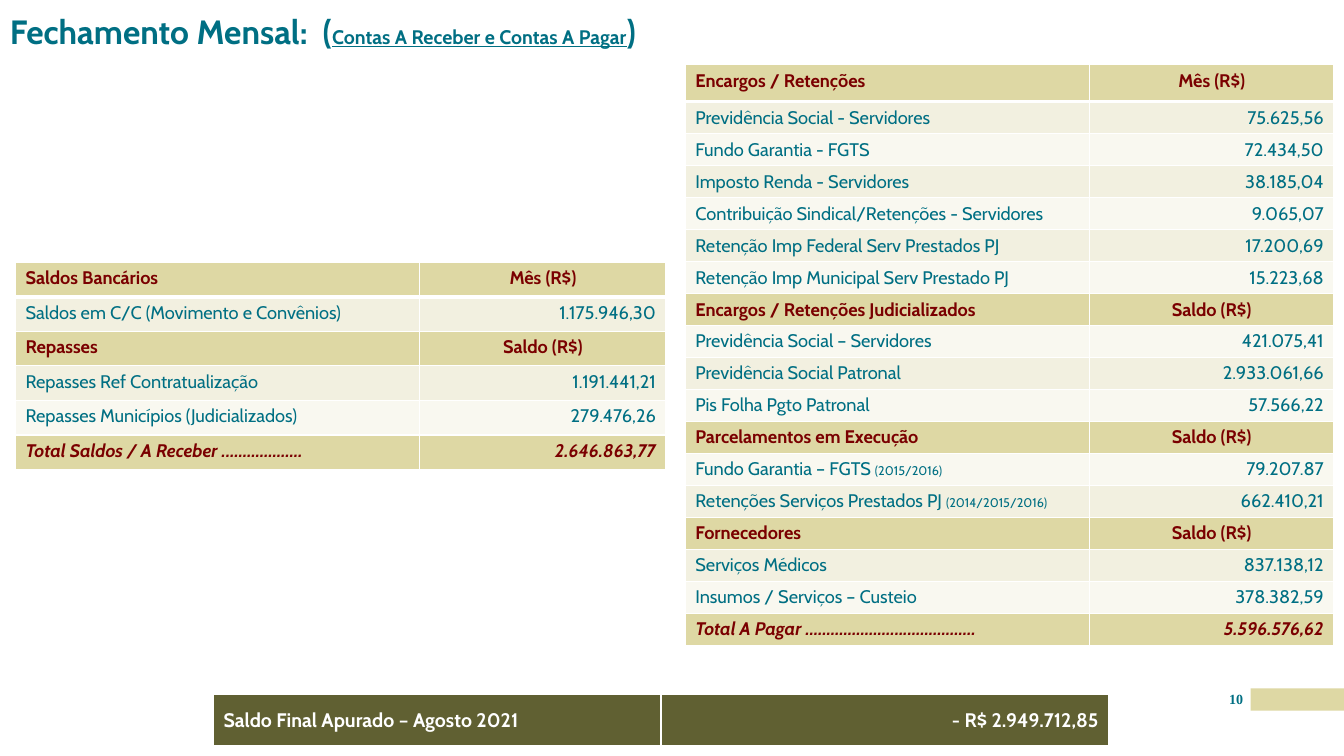
import pptx
import pptx.util
import pptx.dml.color
import pptx.enum.text
import pptx.enum.shapes
import pptx.oxml
import pptx.oxml.ns

Cm = pptx.util.Cm
Pt = pptx.util.Pt
TEAL, WINE, WHITE = "006F83", "7A0000", "FFFFFF"
SAND, OLIVE = "DED8A4", "606032"
BANDS = ["F9F8F0", "F2F0E0"]
ALIGN = {
    "l": pptx.enum.text.PP_ALIGN.LEFT,
    "c": pptx.enum.text.PP_ALIGN.CENTER,
    "r": pptx.enum.text.PP_ALIGN.RIGHT,
}

TITLE = [
    ("Fechamento Mensal:  (", {}),
    ("Contas A Receber e Contas A Pagar", {"size": 14, "line": True}),
    (")", {}),
]
DEBTS = [
    ("Encargos / Retenções", "Mês (R$)"),
    ("Previdência Social - Servidores", "75.625,56"),
    ("Fundo Garantia - FGTS", "72.434,50"),
    ("Imposto Renda - Servidores", "38.185,04"),
    ("Contribuição Sindical/Retenções - Servidores", "9.065,07"),
    ("Retenção Imp Federal Serv Prestados PJ", "17.200,69"),
    ("Retenção Imp Municipal Serv Prestado PJ", "15.223,68"),
    ("Encargos / Retenções Judicializados", "Saldo (R$)"),
    ("Previdência Social – Servidores", "421.075,41"),
    ("Previdência Social Patronal", "2.933.061,66"),
    ("Pis Folha Pgto Patronal", "57.566,22"),
    ("Parcelamentos em Execução", "Saldo (R$)"),
    ("Fundo Garantia – FGTS ", "79.207.87", "(2015/2016)"),
    ("Retenções Serviços Prestados PJ ", "662.410,21", "(2014/2015/2016)"),
    ("Fornecedores", "Saldo (R$)"),
    ("Serviços Médicos", "837.138,12"),
    ("Insumos / Serviços – Custeio", "378.382,59"),
    ("Total A Pagar ........................................", "5.596.576,62"),
]
FUNDS = [
    ("Saldos Bancários", "Mês (R$)"),
    ("Saldos em C/C (Movimento e Convênios)", "1.175.946,30"),
    ("Repasses", "Saldo (R$)"),
    ("Repasses Ref Contratualização", "1.191.441,21"),
    ("Repasses Municípios (Judicializados)", "279.476,26"),
    ("Total Saldos / A Receber ...................", "2.646.863,77"),
]
FINAL = [("Saldo Final Apurado – Agosto 2021", "- R$ 2.949.712,85")]


def paint(fill, color):
    fill.solid()
    fill.fore_color.rgb = pptx.dml.color.RGBColor.from_string(color)


def write(frame, runs, size=13, color=TEAL, font="Cabin", bold=False,
          slant=False, align="l", space=None):
    para = frame.paragraphs[0]
    para.alignment = ALIGN[align]
    para.line_spacing = space
    for text, own in runs:
        run = para.add_run()
        run.text = text
        run.font.name = font
        run.font.size = Pt(own.get("size", size))
        run.font.bold = bold
        run.font.italic = slant
        run.font.underline = own.get("line", False)
        paint(run.font.fill, color)


def label(slide, left, top, width, height, runs, **form):
    frame = slide.shapes.add_textbox(Cm(left), Cm(top), Cm(width), Cm(height)).text_frame
    frame.word_wrap = True
    frame.margin_left = frame.margin_right = frame.margin_top = frame.margin_bottom = 0
    write(frame, runs, **form)


def edge(cell, sides):
    props = cell._tc.get_or_add_tcPr()
    space = pptx.oxml.ns.nsdecls("a")
    lines = [
        pptx.oxml.parse_xml(
            f'<a:ln{side} {space} w="{Pt(width)}"><a:solidFill>'
            f'<a:srgbClr val="{WHITE}"/></a:solidFill></a:ln{side}>')
        for side, width in sides.items()
    ]
    for spot, line in enumerate(lines):
        props.insert(spot, line)


def look(row, name, value):
    if value.endswith("(R$)"):
        return SAND, {"color": WINE, "bold": True}, "c"
    if name.startswith("Total"):
        return SAND, {"color": WINE, "bold": True, "slant": True}, "r"
    return BANDS[row % 2], {}, "r"


def grid(slide, left, top, cols, head, step, rows, bar=False):
    high = head + step * (len(rows) - 1)
    table = slide.shapes.add_table(
        len(rows), 2, Cm(left), Cm(top), Cm(sum(cols)), Cm(high)).table
    table.first_row = table.horz_banding = False
    for col, width in zip(table.columns, cols):
        col.width = Cm(width)
    for row, (name, value, *notes) in enumerate(rows):
        table.rows[row].height = Cm(step if row else head)
        fill, form, align = look(row, name, value)
        if bar:
            fill, form = OLIVE, {"color": WHITE, "bold": True, "size": 14}
        parts = [(name, {})] + [(note, {"size": 9}) for note in notes]
        for col, (runs, side) in enumerate([(parts, "l"), ([(value, {})], align)]):
            cell = table.cell(row, col)
            if bar:
                cell.vertical_anchor = pptx.enum.text.MSO_ANCHOR.MIDDLE
            write(cell.text_frame, runs, align=side, **form)
            paint(cell.fill, fill)
            edge(cell, {"L": 1, "R": 1, "T": 3 if row == 1 else 1, "B": 1 if row else 3})


def main():
    deck = pptx.Presentation()
    deck.slide_width, deck.slide_height = Cm(33.87), Cm(19.05)
    slide = deck.slides.add_slide(deck.slide_layouts[6])
    tab = slide.shapes.add_shape(
        pptx.enum.shapes.MSO_SHAPE.RECTANGLE, Cm(31.52), Cm(17.35), Cm(2.35), Cm(0.56))
    tab.shadow.inherit = False
    tab.line.fill.background()
    paint(tab.fill, SAND)
    label(slide, 30.78, 17.4, 0.74, 0.64, [("10", {})],
          size=10, font="Times New Roman", bold=True, align="c")
    label(slide, 0.25, 0.38, 33.05, 1.27, TITLE, size=24, bold=True, space=0.9)
    grid(slide, 17.27, 1.63, (10.19, 6.15), 0.93, 0.8, DEBTS)
    grid(slide, 0.39, 6.61, (10.19, 6.2), 0.87, 0.87, FUNDS)
    grid(slide, 5.38, 17.5, (11.28, 11.28), 1.32, 0, FINAL, bar=True)
    deck.save("out.pptx")


if __name__ == "__main__":
    main()
